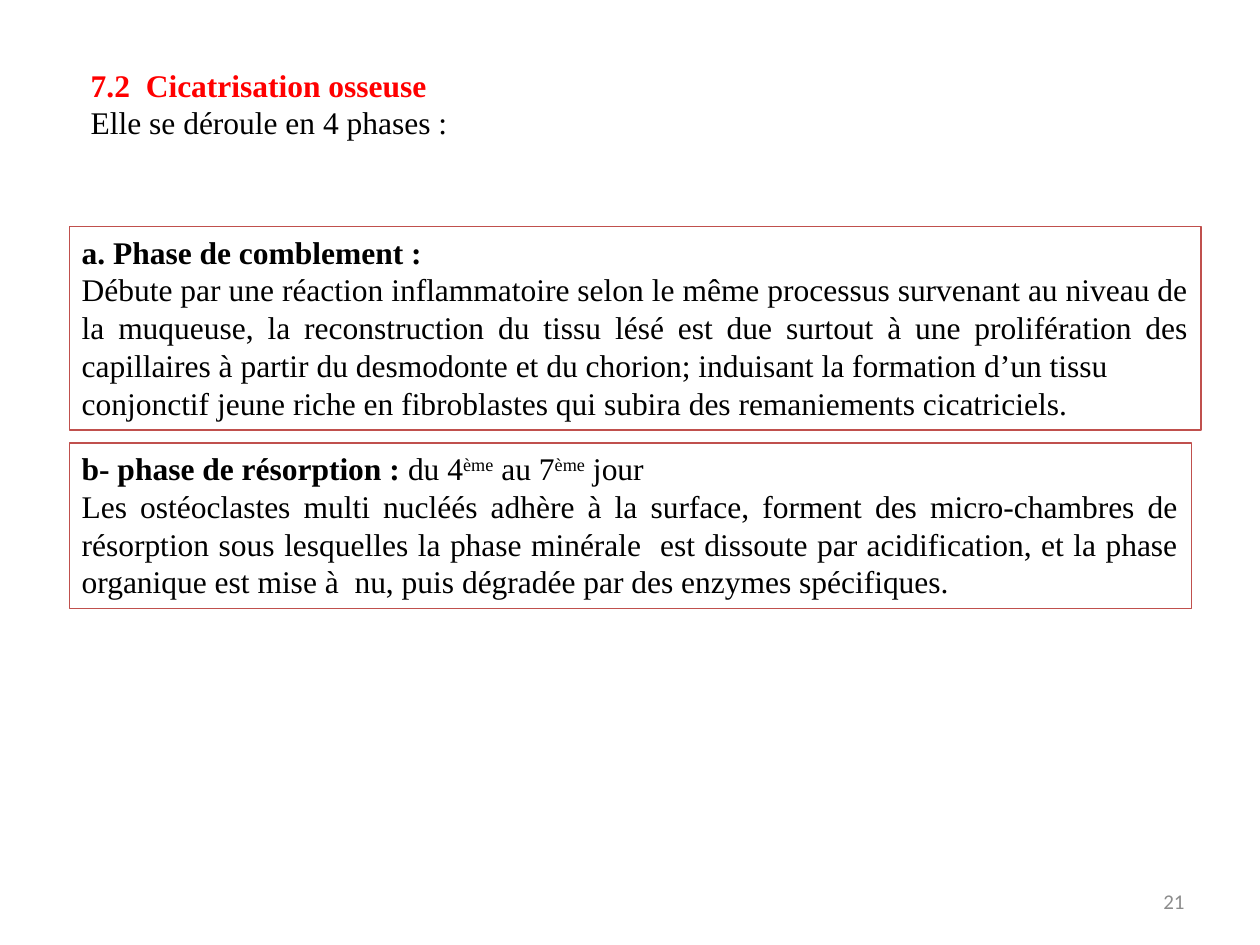
from pptx import Presentation
from pptx.dml.color import RGBColor
from pptx.enum import shapes, text
from pptx.util import Pt

RED = RGBColor(0xFF, 0, 0)
BRICK = RGBColor(0xC0, 0x50, 0x4D)
BLACK = RGBColor(0, 0, 0)
GREY = RGBColor(0x8C, 0x8C, 0x8C)
SERIF = "Times New Roman"
LEFT = 39.6

# Each paragraph is a list of (text, style); styles: "b" bold, "^" raised
FILL = [
    [("a. Phase de comblement\u00a0:", "b")],
    [("Débute par une réaction inflammatoire selon le même processus "
      "survenant au niveau de la muqueuse, la reconstruction du tissu lésé "
      "est due surtout à une prolifération des capillaires à partir du "
      "desmodonte et du chorion; induisant la formation d’un tissu ", "")],
    [("conjonctif jeune riche en fibroblastes qui subira des remaniements "
      "cicatriciels. ", "")],
]
RESORB = [
    [("b- phase de résorption\u00a0: ", "b"), ("du 4", ""), ("ème", "^"),
     (" au 7", ""), ("ème", "^"), (" jour ", "")],
    [("Les ostéoclastes multi nucléés adhère à la surface, forment des "
      "micro-chambres de résorption sous lesquelles la phase minérale  est "
      "dissoute par acidification, et la phase organique est mise à  nu, "
      "puis dégradée par des enzymes spécifiques. ", "")],
]


def style(para, size, name, color, align, bold=False):
    font = para.font
    font.size, font.name, font.bold = Pt(size), name, bold
    font.color.rgb = color
    para.alignment = align


def set_frame(frame, anchor):
    frame.word_wrap = True
    frame.auto_size = text.MSO_AUTO_SIZE.NONE
    frame.vertical_anchor = anchor


def add_title(slide, lines):
    title = slide.shapes.title
    title.left, title.top = Pt(44.64), Pt(33.84)
    title.width, title.height = Pt(360), Pt(51)
    frame = title.text_frame
    set_frame(frame, text.MSO_ANCHOR.TOP)
    frame.text = "\n".join(line for line, _, _ in lines)
    for para, (_, color, bold) in zip(frame.paragraphs, lines):
        style(para, 18, SERIF, color, text.PP_ALIGN.JUSTIFY, bold)


def add_phase(slide, top, width, height, paras):
    box = slide.shapes.add_shape(shapes.MSO_SHAPE.RECTANGLE, Pt(LEFT),
                                 Pt(top), Pt(width), Pt(height))
    box.shadow.inherit = False
    box.fill.background()
    box.line.color.rgb = BRICK
    box.line.width = Pt(0.75)
    frame = box.text_frame
    set_frame(frame, text.MSO_ANCHOR.TOP)
    for i, parts in enumerate(paras):
        para = frame.add_paragraph() if i else frame.paragraphs[0]
        style(para, 18, SERIF, BLACK, text.PP_ALIGN.JUSTIFY)
        for words, kind in parts:
            run = para.add_run()
            run.text = words
            if kind == "b":
                run.font.bold = True
            elif kind == "^":
                run.font._element.set("baseline", "30000")


def add_number(slide, number):
    box = slide.shapes.add_textbox(Pt(516), Pt(500.5), Pt(168), Pt(28.75))
    frame = box.text_frame
    set_frame(frame, text.MSO_ANCHOR.MIDDLE)
    frame.text = number
    style(frame.paragraphs[0], 12, "Calibri", GREY, text.PP_ALIGN.RIGHT)


def main():
    prs = Presentation()
    prs.slide_width, prs.slide_height = Pt(720), Pt(540)
    slide = prs.slides.add_slide(prs.slide_layouts[5])

    # Heading and lead-in
    add_title(slide, [("7.2  Cicatrisation osseuse", RED, True),
                      ("Elle se déroule en 4 phases :", BLACK, False)])
    # Framed phases
    add_phase(slide, 129.4, 646.8, 116.3, FILL)
    add_phase(slide, 253.1, 641.2, 94.5, RESORB)
    # Page number
    add_number(slide, "21")

    prs.save("out.pptx")


if __name__ == "__main__":
    main()
